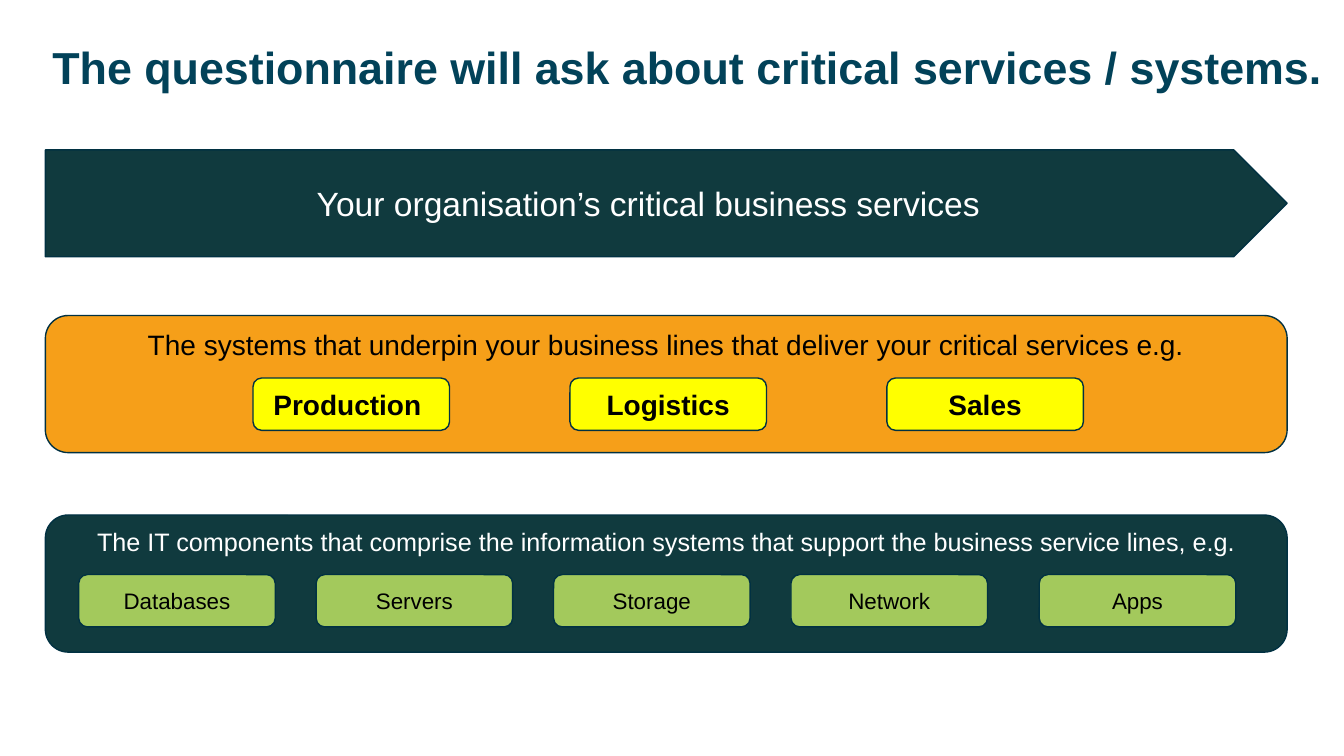
from dataclasses import dataclass

import pptx
import pptx.dml.color
import pptx.enum.shapes
import pptx.enum.text
import pptx.shapes.autoshape
import pptx.util

Pt = pptx.util.Pt
Kind = pptx.enum.shapes.MSO_SHAPE
Anchor = pptx.enum.text.MSO_ANCHOR
Align = pptx.enum.text.PP_ALIGN

FONT = "Arial"
TEAL, NAVY, TITLE_BLUE = "103A3E", "013142", "024259"
ORANGE, YELLOW, GREEN = "F69F19", "FFFF00", "A3C95C"
BLACK, WHITE = "000000", "FFFFFF"

BAND_LEFT, BAND_WIDTH, BAND_HEIGHT = 32.4, 887, 97.9
CHIP_WIDTH, CHIP_HEIGHT = 140.4, 37.4
SYSTEM_LEFT, SYSTEM_PITCH = 180.7, 226.4
COMPONENT_LEFT, COMPONENT_PITCH = 56.2, 169.6
APPS_LEFT = 742.3


@dataclass
class TextStyle:
    size: float
    color: str
    bold: bool = False


@dataclass
class Chip:
    label: str
    left: float


@dataclass
class Band:
    caption: str
    top: float
    fill: str
    style: TextStyle
    chips: list[Chip]
    chip_top: float
    chip_fill: str
    chip_style: TextStyle


def color(value: str) -> pptx.dml.color.RGBColor:
    return pptx.dml.color.RGBColor.from_string(value)


def write(box: pptx.shapes.autoshape.Shape, text: str, style: TextStyle,
          align: Align, anchor: Anchor) -> None:
    frame = box.text_frame
    frame.word_wrap = True
    frame.vertical_anchor = anchor
    para = frame.paragraphs[0]
    para.alignment = align
    span = para.add_run()
    span.text = text
    span.font.name = FONT
    span.font.size = Pt(style.size)
    span.font.bold = style.bold
    span.font.color.rgb = color(style.color)


def add_panel(shapes, kind: Kind, left: float, top: float, width: float,
              height: float, fill: str, text: str, style: TextStyle,
              anchor: Anchor = Anchor.MIDDLE) -> None:
    """Add a filled, outlined shape with centred text to a slide or group."""
    box = shapes.add_shape(kind, Pt(left), Pt(top), Pt(width), Pt(height))
    box.shadow.inherit = False
    box.fill.solid()
    box.fill.fore_color.rgb = color(fill)
    box.line.color.rgb = color(NAVY)
    box.line.width = Pt(1)
    write(box, text, style, Align.CENTER, anchor)


def add_band(page, band: Band) -> None:
    shapes = page.shapes.add_group_shape().shapes
    add_panel(shapes, Kind.ROUNDED_RECTANGLE, BAND_LEFT, band.top, BAND_WIDTH,
              BAND_HEIGHT, band.fill, band.caption, band.style, Anchor.TOP)
    for chip in band.chips:
        add_panel(shapes, Kind.ROUNDED_RECTANGLE, chip.left, band.chip_top,
                  CHIP_WIDTH, CHIP_HEIGHT, band.chip_fill, chip.label,
                  band.chip_style)


def add_title(page, text: str) -> None:
    box = page.shapes.add_textbox(Pt(37.4), Pt(25.9), Pt(922.6), Pt(47.5))
    frame = box.text_frame
    frame.margin_left = frame.margin_right = Pt(0)
    frame.margin_top = frame.margin_bottom = Pt(0)
    write(box, text, TextStyle(32, TITLE_BLUE, True), Align.LEFT, Anchor.MIDDLE)
    frame.paragraphs[0].line_spacing = 0.9


def chip_row(labels: list[str], left: float, pitch: float) -> list[Chip]:
    return [Chip(label, left + index * pitch) for index, label in enumerate(labels)]


BANDS = [
    Band("The IT components that comprise the information systems that support "
         "the business service lines, e.g.",
         367.9, TEAL, TextStyle(18, WHITE),
         chip_row(["Databases", "Servers", "Storage", "Network"],
                  COMPONENT_LEFT, COMPONENT_PITCH) + [Chip("Apps", APPS_LEFT)],
         410.4, GREEN, TextStyle(16, BLACK)),
    Band("The systems that underpin your business lines that deliver your "
         "critical services e.g.",
         225.4, ORANGE, TextStyle(20, BLACK),
         chip_row(["Production ", "Logistics", "Sales"],
                  SYSTEM_LEFT, SYSTEM_PITCH),
         270, YELLOW, TextStyle(20, BLACK, True)),
]


def main() -> None:
    deck = pptx.Presentation()
    deck.slide_width, deck.slide_height = Pt(960), Pt(540)
    page = deck.slides.add_slide(deck.slide_layouts[6])
    add_panel(page.shapes, Kind.PENTAGON, BAND_LEFT, 107.1, BAND_WIDTH, 76.3,
              TEAL, "Your organisation’s critical business services ",
              TextStyle(24, WHITE))
    for band in BANDS:
        add_band(page, band)
    add_title(page, "The questionnaire will ask about critical services / systems.")
    deck.save("out.pptx")


if __name__ == "__main__":
    main()
